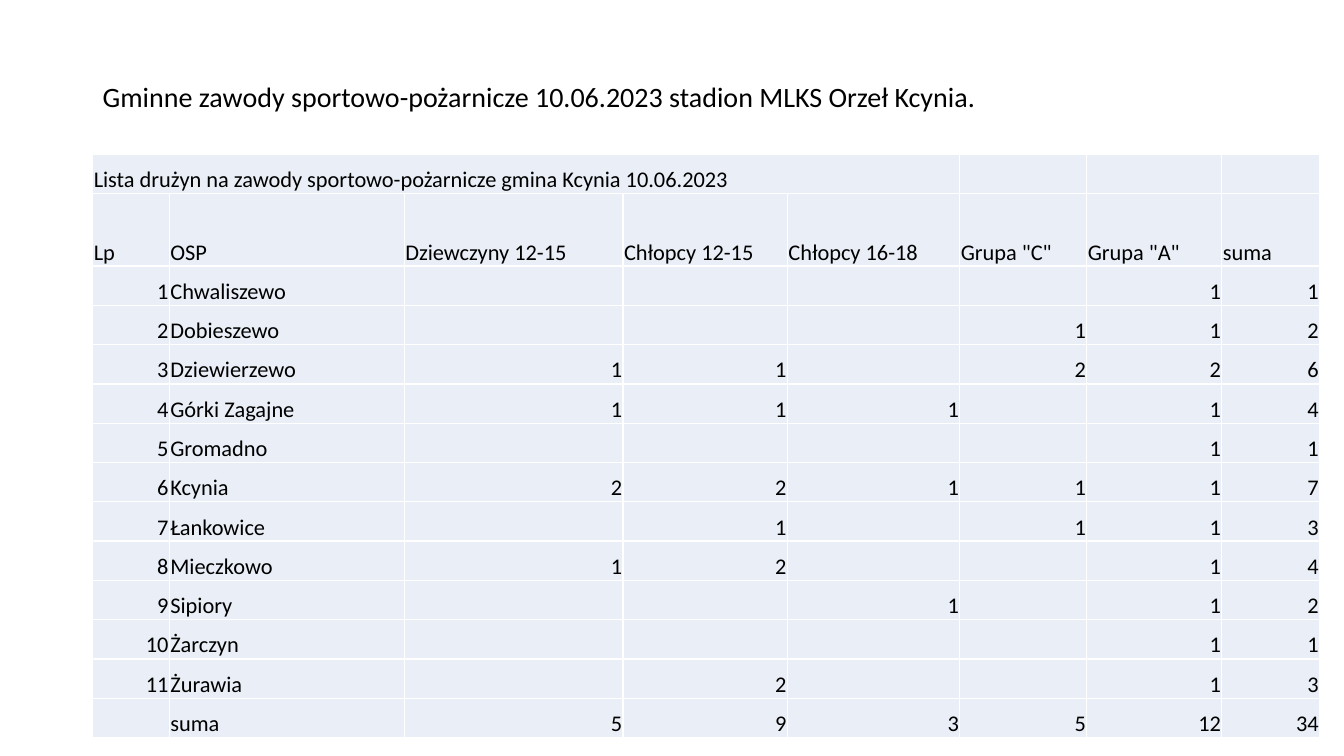
"""Build the slide listing the teams entered in the Kcynia fire-sport contest."""
from pptx import Presentation
from pptx.dml.color import RGBColor
from pptx.enum.text import MSO_ANCHOR, PP_ALIGN
from pptx.util import Inches, Pt

MIDDLE, BOTTOM = MSO_ANCHOR.MIDDLE, MSO_ANCHOR.BOTTOM
LEFT, RIGHT = PP_ALIGN.LEFT, PP_ALIGN.RIGHT
FONT, INK, PALE = "Calibri", "000000", "EAEFF7"

TITLE = "Gminne zawody sportowo-pożarnicze 10.06.2023 stadion MLKS Orzeł Kcynia."
BANNER = "Lista drużyn na zawody sportowo-pożarnicze gmina Kcynia 10.06.2023"
HEADS = ["Lp", "OSP", "Dziewczyny 12-15", "Chłopcy 12-15", "Chłopcy 16-18",
         'Grupa "C"', 'Grupa "A"', "suma"]
TEAMS = [
    ("Chwaliszewo", 0, 0, 0, 0, 1),
    ("Dobieszewo", 0, 0, 0, 1, 1),
    ("Dziewierzewo", 1, 1, 0, 2, 2),
    ("Górki Zagajne", 1, 1, 1, 0, 1),
    ("Gromadno", 0, 0, 0, 0, 1),
    ("Kcynia", 2, 2, 1, 1, 1),
    ("Łankowice", 0, 1, 0, 1, 1),
    ("Mieczkowo", 1, 2, 0, 0, 1),
    ("Sipiory", 0, 0, 1, 0, 1),
    ("Żarczyn", 0, 0, 0, 0, 1),
    ("Żurawia", 0, 2, 0, 0, 1),
]
WIDTHS = [0.76, 2.33, 2.17, 1.63, 1.71, 1.26, 1.34, 0.97]
ROW, HEAD_ROW = 0.39, 0.72


def color(code):
    return RGBColor.from_string(code)


def write(frame, text, size, align=LEFT):
    para = frame.paragraphs[0]
    para.text = text
    para.alignment = align
    para.font.name = FONT
    para.font.size = Pt(size)
    para.font.color.rgb = color(INK)
    return para


def add_title(slide):
    frame = slide.shapes.add_textbox(
        Inches(0.92), Inches(0.4), Inches(11.5), Inches(1.45)).text_frame
    frame.word_wrap = True
    frame.vertical_anchor = MIDDLE
    frame.margin_bottom = Inches(0.35)
    write(frame, TITLE, 20).line_spacing = 0.9


def list_rows():
    rows = [[BANNER] + [""] * (len(HEADS) - 1), HEADS]
    for rank, (name, *counts) in enumerate(TEAMS, 1):
        rows.append([rank, name, *counts, sum(counts)])
    totals = [sum(group) for group in zip(*(team[1:] for team in TEAMS))]
    return rows + [["", "suma", *totals, sum(totals)]]


def fill_cell(cell, value):
    cell.fill.solid()
    cell.fill.fore_color.rgb = color(PALE)
    cell.vertical_anchor = BOTTOM
    cell.margin_left = cell.margin_right = cell.margin_top = Inches(0.01)
    cell.margin_bottom = 0
    align = RIGHT if isinstance(value, int) else LEFT
    write(cell.text_frame, str(value or ""), 16, align)


def add_list(slide):
    rows = list_rows()
    heights = [HEAD_ROW if row is HEADS else ROW for row in rows]
    table = slide.shapes.add_table(
        len(rows), len(HEADS), Inches(0.92), Inches(1.53),
        Inches(sum(WIDTHS)), Inches(sum(heights))).table
    table.first_row = table.horz_banding = False
    for column, width in zip(table.columns, WIDTHS):
        column.width = Inches(width)
    for line, height, row in zip(table.rows, heights, rows):
        line.height = Inches(height)
        for cell, value in zip(line.cells, row):
            fill_cell(cell, value)
    table.cell(0, 0).merge(table.cell(0, 4))


def main():
    deck = Presentation()
    deck.slide_width, deck.slide_height = Inches(13.33), Inches(7.5)
    slide = deck.slides.add_slide(deck.slide_layouts[6])
    add_title(slide)
    add_list(slide)
    deck.save("out.pptx")


if __name__ == "__main__":
    main()
